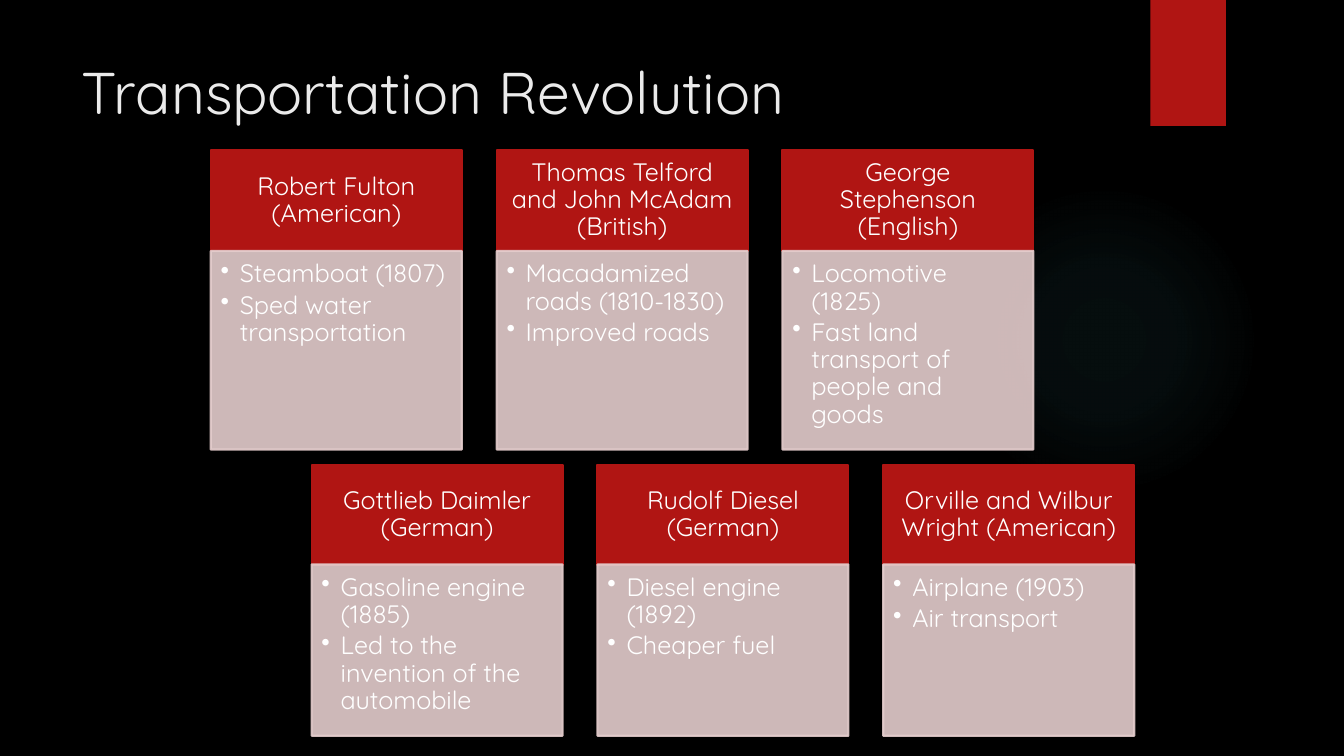
from lxml.etree import SubElement
from pptx import Presentation
from pptx.dml.color import RGBColor
from pptx.enum.shapes import MSO_SHAPE
from pptx.enum.text import MSO_ANCHOR, MSO_AUTO_SIZE, PP_ALIGN
from pptx.oxml import parse_xml
from pptx.oxml.ns import nsdecls, qn
from pptx.util import Inches, Pt

COLORS = {
    "background": "000000",
    "accent": "B01513",
    "card": "E4CCCC",
    "glow": "50B9C1",
    "title": "EBEBEB",
    "text": "FFFFFF",
}
FONT = "Quicksand"
CARD_WIDTH, HEADING_HEIGHT, COLUMN_STEP = 2.49, 1, 2.835

# Each row: left, top of headings, top of details, height of details, inventors
ROWS = [
    (2.09, 1.49, 2.49, 1.97, [
        ("Robert Fulton (American)",
         ["Steamboat (1807)", "Sped water transportation"]),
        ("Thomas Telford and John McAdam (British)",
         ["Macadamized roads (1810-1830)", "Improved roads"]),
        ("George Stephenson (English)",
         ["Locomotive (1825)", "Fast land transport of people and goods"]),
    ]),
    (3.09, 4.61, 5.6, 1.7, [
        ("Gottlieb Daimler (German)",
         ["Gasoline engine (1885)", "Led to the invention of the automobile"]),
        ("Rudolf Diesel (German)",
         ["Diesel engine (1892)", "Cheaper fuel"]),
        ("Orville and Wilbur Wright (American)",
         ["Airplane (1903)", "Air transport"]),
    ]),
]


def rgb(name):
    return RGBColor.from_string(COLORS[name])


class SlideBuilder:
    def __init__(self, slide):
        self.slide = slide
        slide.background.fill.solid()
        slide.background.fill.fore_color.rgb = rgb("background")

    def style(self, paragraph, size, color):
        paragraph.font.name = FONT
        paragraph.font.size = Pt(size)
        paragraph.font.color.rgb = rgb(color)

    def title(self, text, *box):
        title = self.slide.shapes.title
        title.left, title.top, title.width, title.height = map(Inches, box)
        frame = title.text_frame
        frame.text = text
        frame.word_wrap = True
        frame.auto_size = MSO_AUTO_SIZE.NONE
        frame.vertical_anchor = MSO_ANCHOR.TOP
        frame.paragraphs[0].alignment = PP_ALIGN.LEFT
        self.style(frame.paragraphs[0], 42, "title")

    def shape(self, kind, color, *box):
        shape = self.slide.shapes.add_shape(kind, *map(Inches, box))
        shape.shadow.inherit = False
        shape.fill.solid()
        shape.fill.fore_color.rgb = rgb(color)
        shape.line.fill.background()
        return shape

    def glow(self, *box):
        glow = self.shape(MSO_SHAPE.OVAL, "glow", *box)
        stops = "".join(
            f'<a:gs pos="{position}000"><a:srgbClr val="{COLORS["glow"]}">'
            f'<a:alpha val="{alpha}000"/></a:srgbClr></a:gs>'
            for position, alpha in [(0, 7), (36, 6), (69, 0)])
        gradient = parse_xml(
            f'<a:gradFill {nsdecls("a")}><a:gsLst>{stops}</a:gsLst><a:path path="circle">'
            '<a:fillToRect l="50000" t="50000" r="50000" b="50000"/></a:path></a:gradFill>')
        properties = glow.element.spPr
        properties.replace(properties.find(qn("a:solidFill")), gradient)

    def panel(self, color, box, insets, lines):
        panel = self.shape(MSO_SHAPE.RECTANGLE, color, *box)
        panel.line.color.rgb = rgb(color)
        panel.line.width = Pt(1.5)
        frame = panel.text_frame
        frame.word_wrap = True
        (frame.margin_left, frame.margin_top,
         frame.margin_right, frame.margin_bottom) = map(Inches, insets)
        frame.text = "\n".join(lines)
        for paragraph in frame.paragraphs:
            paragraph.line_spacing = 0.9
            self.style(paragraph, 18, "text")
        return panel

    def heading(self, text, *box):
        heading = self.panel("accent", box, (0.14, 0.08, 0.14, 0.08), [text])
        heading.text_frame.vertical_anchor = MSO_ANCHOR.MIDDLE
        heading.text_frame.paragraphs[0].alignment = PP_ALIGN.CENTER

    def details(self, lines, *box):
        details = self.panel("card", box, (0.1, 0.1, 0.14, 0.16), lines)
        details.text_frame.vertical_anchor = MSO_ANCHOR.TOP
        # Fill and border let a little of the background through
        for color in details.element.spPr.iter(qn("a:srgbClr")):
            SubElement(color, qn("a:alpha"), val="90000")
        for paragraph in details.text_frame.paragraphs:
            paragraph.alignment = PP_ALIGN.LEFT
            paragraph.space_after = Pt(3)
            properties = paragraph._p.get_or_add_pPr()
            properties.set("marL", str(Inches(0.19)))
            properties.set("indent", str(-Inches(0.19)))
            bullet = parse_xml(f'<a:buChar {nsdecls("a")} char="•"/>')
            properties.find(qn("a:defRPr")).addprevious(bullet)


def main():
    deck = Presentation()
    deck.slide_width, deck.slide_height = Inches(13.33), Inches(7.5)
    builder = SlideBuilder(deck.slides.add_slide(deck.slide_layouts[5]))

    # Backdrop and title
    builder.glow(9.41, 1.83, 3.08, 3.08)
    builder.shape(MSO_SHAPE.RECTANGLE, "accent", 11.41, 0, 0.75, 1.25)
    builder.title("Transportation Revolution", 0.71, 0.5, 10.29, 1.53)

    # Two staggered rows of inventor cards
    for row_left, heading_top, details_top, details_height, inventors in ROWS:
        for column, (inventor, achievements) in enumerate(inventors):
            left = row_left + column * COLUMN_STEP
            builder.heading(inventor, left, heading_top, CARD_WIDTH, HEADING_HEIGHT)
            builder.details(achievements, left, details_top, CARD_WIDTH, details_height)

    deck.save("out.pptx")


if __name__ == "__main__":
    main()
